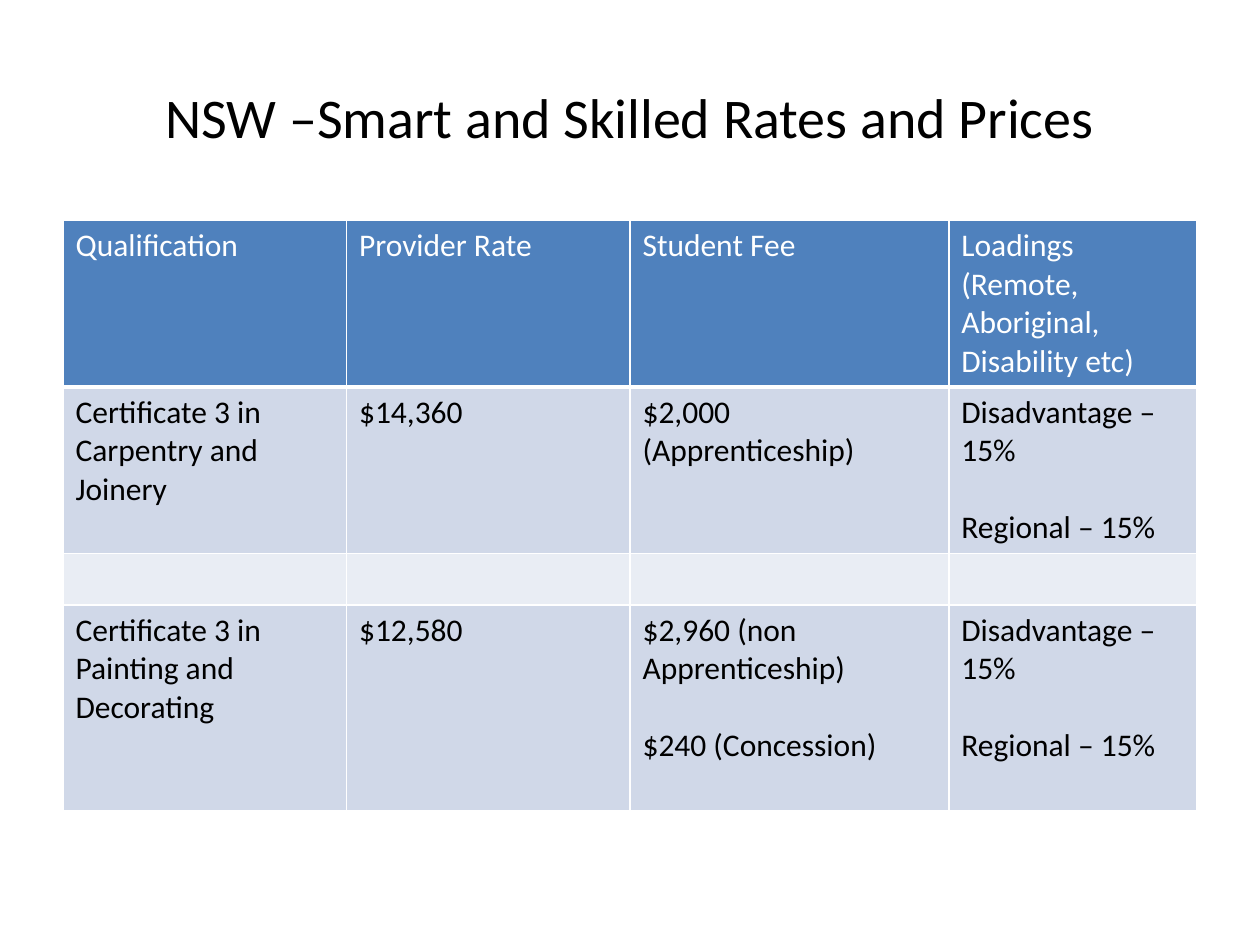
from lxml.etree import SubElement
from pptx import Presentation
from pptx.dml.color import RGBColor
from pptx.enum.text import MSO_ANCHOR, PP_ALIGN
from pptx.oxml.ns import qn
from pptx.util import Inches, Pt

THEME = {
    "font": "Calibri",
    "title_size": Pt(32),
    "body_size": Pt(18),
    "paragraph_gap": Pt(22),
    "text": "000000",
    "header_text": "FFFFFF",
    "header_fill": "4F81BD",
    "bands": ["D0D8E8", "E9EDF4"],
    "border": "FFFFFF",
    "border_width": Pt(1),
    "header_rule_width": Pt(3),
}

LOADINGS = ["Disadvantage – 15%", "Regional – 15%"]
ROWS = [
    [["Qualification"], ["Provider Rate"], ["Student Fee"],
     ["Loadings (Remote, Aboriginal, Disability etc)"]],
    [["Certificate 3 in Carpentry and Joinery"], ["$14,360"],
     ["$2,000 (Apprenticeship)"], LOADINGS],
    [[], [], [], []],
    [["Certificate 3 in Painting and Decorating"], ["$12,580"],
     ["$2,960 (non Apprenticeship)", "$240 (Concession)"], LOADINGS],
]
COLUMN_WIDTHS = [2.25, 2.25, 2.53, 1.97]
ROW_HEIGHTS = [1.32, 1.32, 0.41, 1.63]


def format_font(font, size, color):
    values = {"name": THEME["font"], "size": size, "bold": False}
    for name, value in values.items():
        setattr(font, name, value)
    font.color.rgb = RGBColor.from_string(color)


def add_borders(cell, is_header):
    properties = cell._tc.get_or_add_tcPr()
    for side in ("L", "R", "T", "B"):
        heavy = is_header and side == "B"
        width = THEME["header_rule_width" if heavy else "border_width"]
        line = SubElement(properties, qn(f"a:ln{side}"), w=str(width))
        fill = SubElement(line, qn("a:solidFill"))
        SubElement(fill, qn("a:srgbClr"), val=THEME["border"])


presentation = Presentation()
presentation.slide_width = Inches(10)
presentation.slide_height = Inches(7.5)
slide = presentation.slides.add_slide(presentation.slide_layouts[5])

title = slide.shapes.title
title_place = {"left": 0.5, "top": 0.3, "width": 9, "height": 1.25}
for name, value in title_place.items():
    setattr(title, name, Inches(value))
title.text_frame.text = "NSW –Smart and Skilled Rates and Prices"
title.text_frame.vertical_anchor = MSO_ANCHOR.MIDDLE
title_paragraph = title.text_frame.paragraphs[0]
title_paragraph.alignment = PP_ALIGN.CENTER
format_font(title_paragraph.runs[0].font, THEME["title_size"], THEME["text"])

rates_table = slide.shapes.add_table(
    len(ROWS), len(COLUMN_WIDTHS), Inches(0.5), Inches(1.75),
    Inches(sum(COLUMN_WIDTHS)), Inches(sum(ROW_HEIGHTS))).table
for column, width in zip(rates_table.columns, COLUMN_WIDTHS):
    column.width = Inches(width)
for row, height in zip(rates_table.rows, ROW_HEIGHTS):
    row.height = Inches(height)

for row_index, row_texts in enumerate(ROWS):
    is_header = row_index == 0
    fill_color = THEME["header_fill"] if is_header else THEME["bands"][(row_index - 1) % 2]
    text_color = THEME["header_text" if is_header else "text"]
    for column_index, lines in enumerate(row_texts):
        cell = rates_table.cell(row_index, column_index)
        add_borders(cell, is_header)
        cell.fill.solid()
        cell.fill.fore_color.rgb = RGBColor.from_string(fill_color)
        cell.text = "\n".join(lines)
        for line_index, paragraph in enumerate(cell.text_frame.paragraphs):
            format_font(paragraph.font, THEME["body_size"], text_color)
            for run in paragraph.runs:
                format_font(run.font, THEME["body_size"], text_color)
            if line_index:
                paragraph.space_before = THEME["paragraph_gap"]

presentation.save("out.pptx")
